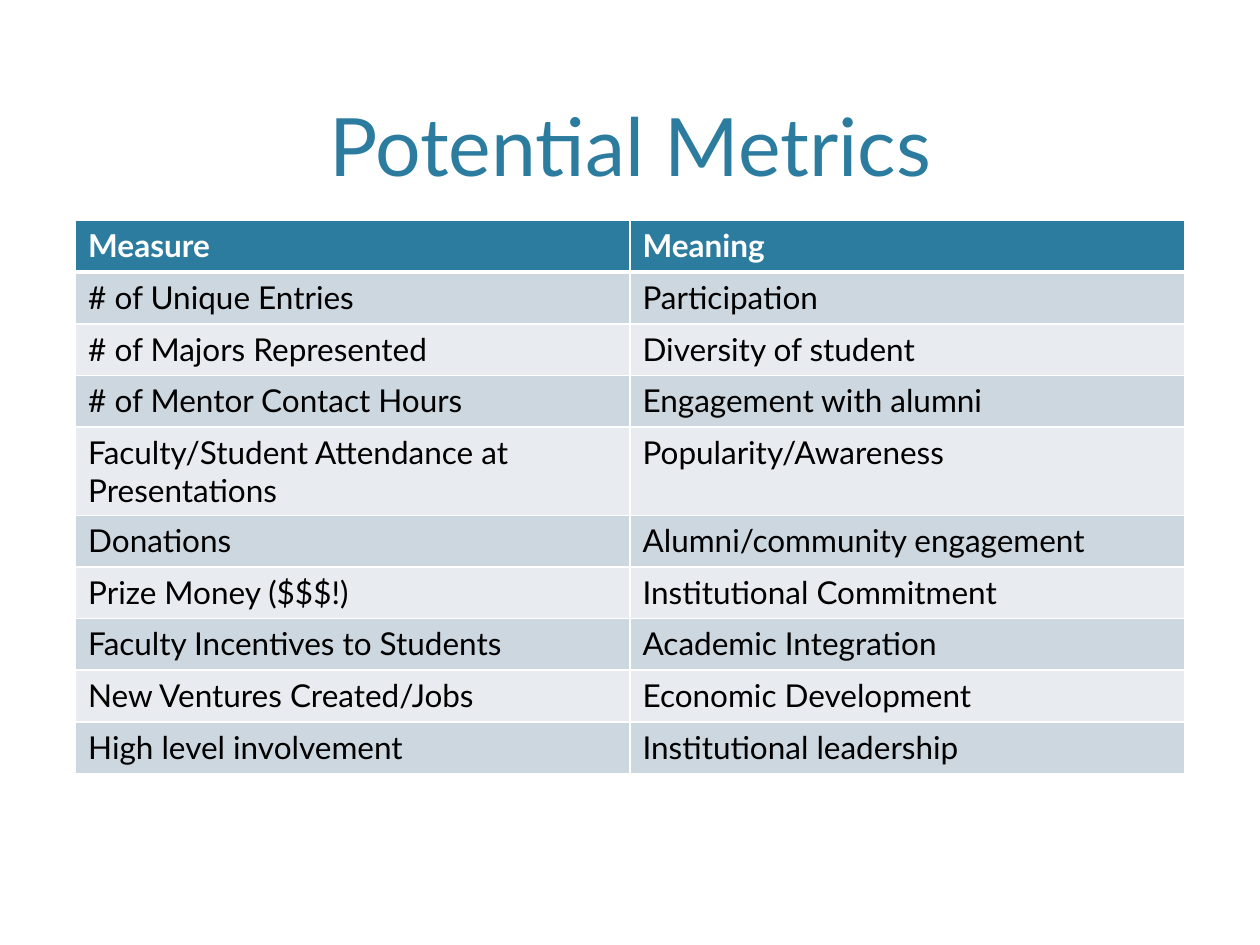
import pptx
import pptx.dml.color
import pptx.enum.text
import pptx.oxml
import pptx.oxml.ns
import pptx.util
from pptx.util import Inches

FONT = "Lato"
COLORS = {
    "accent": "2C7C9F",
    "band_dark": "CDD7DF",
    "band_light": "E8ECF0",
    "white": "FFFFFF",
    "black": "000000",
}
METRICS = [
    ("Measure", "Meaning"),
    ("# of Unique Entries", "Participation"),
    ("# of Majors Represented", "Diversity of student"),
    ("# of Mentor Contact Hours", "Engagement with alumni"),
    ("Faculty/Student Attendance at Presentations", "Popularity/Awareness"),
    ("Donations", "Alumni/community engagement"),
    ("Prize Money ($$$!)", "Institutional Commitment"),
    ("Faculty Incentives to Students", "Academic Integration"),
    ("New Ventures Created/Jobs", "Economic Development"),
    ("High level involvement", "Institutional leadership"),
]


def rgb(name):
    return pptx.dml.color.RGBColor.from_string(COLORS[name])


def write(paragraph, text, size, color, bold=False):
    run = paragraph.add_run()
    run.text = text
    font_format = {"name": FONT, "size": pptx.util.Pt(size), "bold": bold}
    for attribute, value in font_format.items():
        setattr(run.font, attribute, value)
    run.font.color.rgb = rgb(color)


def add_borders(cell, widths):
    """Draw white cell borders; widths maps L, R, T, B (in that order) to points."""
    properties = cell._tc.get_or_add_tcPr()
    for side, points in widths.items():
        properties.append(pptx.oxml.parse_xml(
            f'<a:ln{side} {pptx.oxml.ns.nsdecls("a")} w="{pptx.util.Pt(points)}">'
            f'<a:solidFill><a:srgbClr val="{COLORS["white"]}"/></a:solidFill>'
            f'</a:ln{side}>'))


def add_title(slide, left, top, width, height):
    frame = slide.shapes.add_textbox(left, top, width, height).text_frame
    frame.word_wrap = True
    frame.vertical_anchor = pptx.enum.text.MSO_ANCHOR.BOTTOM
    heading = frame.paragraphs[0]
    heading.alignment = pptx.enum.text.PP_ALIGN.CENTER
    write(heading, "Potential Metrics", 46, "accent")


def add_metrics_table(slide, left, top, width, row_height):
    table = slide.shapes.add_table(
        len(METRICS), len(METRICS[0]), left, top, width, row_height * len(METRICS)).table
    for row, texts in enumerate(METRICS):
        is_header = row == 0
        band = "band_dark" if row % 2 else "band_light"
        widths = {"L": 1, "R": 1, "T": 3 if row == 1 else 1, "B": 3 if is_header else 1}
        for column, text in enumerate(texts):
            cell = table.cell(row, column)
            add_borders(cell, widths)
            cell.fill.solid()
            cell.fill.fore_color.rgb = rgb("accent" if is_header else band)
            write(cell.text_frame.paragraphs[0], text, 18,
                  "white" if is_header else "black", bold=is_header)


def main():
    presentation = pptx.Presentation()
    presentation.slide_width = Inches(10)
    presentation.slide_height = Inches(7.5)
    slide = presentation.slides.add_slide(presentation.slide_layouts[6])
    left, width = Inches(0.6), Inches(8.8)
    add_title(slide, left, Inches(0.12), width, Inches(1.46))
    add_metrics_table(slide, left, Inches(1.75), width, Inches(0.41))
    presentation.save("out.pptx")


if __name__ == "__main__":
    main()
